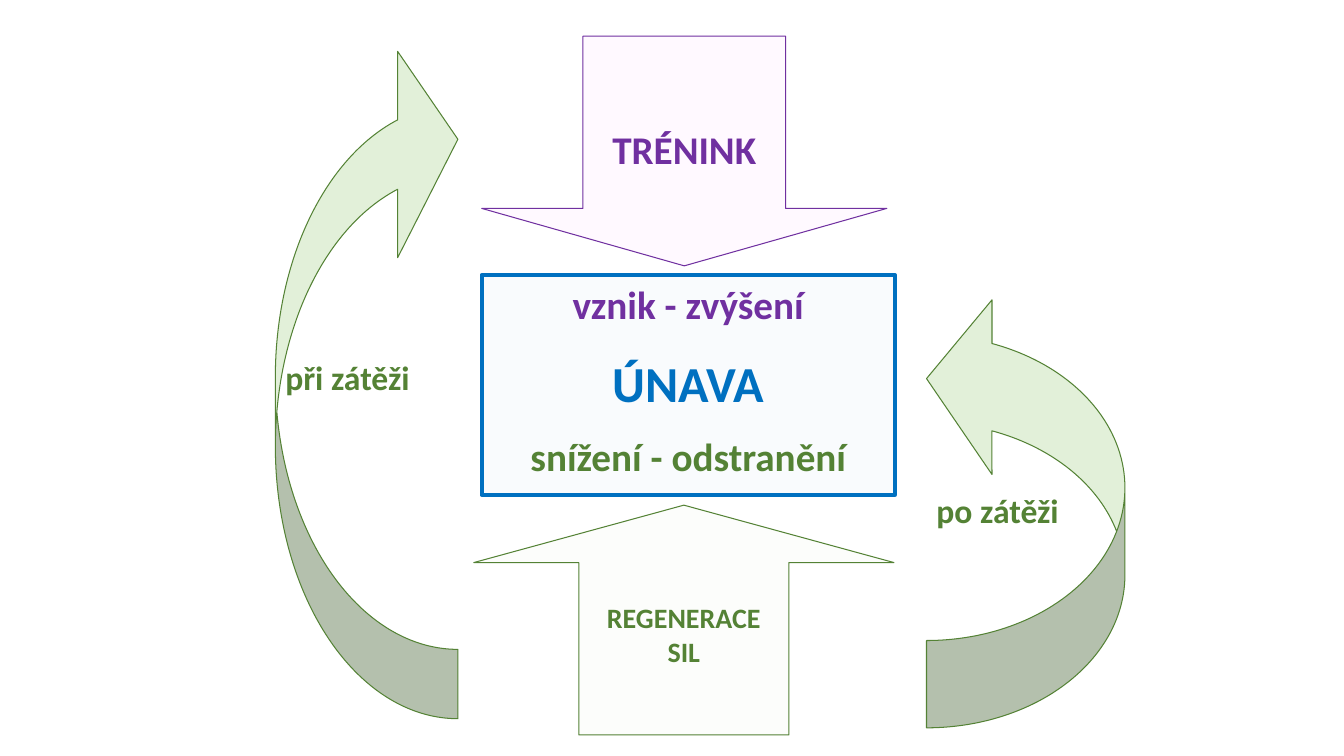
import pptx
import pptx.util
import pptx.dml.color
import pptx.enum.shapes
import pptx.enum.text
import pptx.oxml
import pptx.oxml.ns

Cm, Pt = pptx.util.Cm, pptx.util.Pt
SHAPE = pptx.enum.shapes.MSO_SHAPE
ANCHOR = pptx.enum.text.MSO_ANCHOR

PURPLE, BLUE, GREEN, PALE_GREEN = "7030A0", "0070C0", "548235", "E2F0D9"

# Content: lines are (text, size in points, colour)
FATIGUE = [("vznik - zvýšení", 28, PURPLE), ("ÚNAVA", 36, BLUE),
           ("snížení - odstranění", 28, GREEN)]
TRAINING = [("TRÉNINK", 28, PURPLE)]
RECOVERY = [("REGENERACE", 20, GREEN), ("SIL", 20, GREEN)]
AFTER_LOAD = [("po zátěži", 24, GREEN)]
DURING_LOAD = [("při zátěži", 24, GREEN)]

# Preset, (left, top, width, height) in cm, adjustments, fill, opacity %, line, width, lines
BOX = (SHAPE.RECTANGLE, (12.14, 6.93, 10.41, 5.54), (), "BDD7EE", 9, BLUE, 3, FATIGUE)
DOWN = (SHAPE.DOWN_ARROW, (12.14, 0.91, 10.21, 5.79), (0.5, 0.25),
        "FFCCFF", 11, PURPLE, 0.75, TRAINING)
UP = (SHAPE.UP_ARROW, (11.94, 12.73, 10.59, 5.79), (0.5, 0.25),
      PALE_GREEN, 9, GREEN, 0.75, RECOVERY)
RIGHT_LOOP = (SHAPE.CURVED_UP_ARROW, (20.35, 10.34, 11, 5), (0.44, 0.88, 0.33),
              PALE_GREEN, 100, GREEN, 0.75, AFTER_LOAD)
LEFT_LOOP = (SHAPE.CURVED_DOWN_ARROW, (0.64, 7.21, 17.2, 4.6), (0.38, 1.13, 0.33),
             PALE_GREEN, 100, GREEN, 0.75, DURING_LOAD)


def rgb(color):
    return pptx.dml.color.RGBColor.from_string(color)


def add_part(slide, preset, place, adjustments, fill, opacity, line, width, lines):
    sp = slide.shapes.add_shape(preset, *(Cm(v) for v in place))
    sp.shadow.inherit = False
    for i, value in enumerate(adjustments):
        sp.adjustments[i] = value
    sp.fill.solid()
    sp.fill.fore_color.rgb = rgb(fill)
    if opacity < 100:
        clr = sp.fill._xPr.find(".//" + pptx.oxml.ns.qn("a:srgbClr"))
        clr.append(pptx.oxml.parse_xml(
            f'<a:alpha {pptx.oxml.ns.nsdecls("a")} val="{opacity * 1000}"/>'))
    sp.line.color.rgb = rgb(line)
    sp.line.width = Pt(width)

    tf = sp.text_frame
    tf.word_wrap = False
    tf.vertical_anchor = ANCHOR.MIDDLE
    for i, (text, size, color) in enumerate(lines):
        p = tf.add_paragraph() if i else tf.paragraphs[0]
        p.alignment = pptx.enum.text.PP_ALIGN.CENTER
        r = p.add_run()
        r.text = text
        r.font.name = "Calibri"
        r.font.size = Pt(size)
        r.font.bold = True
        r.font.color.rgb = rgb(color)
    return sp


prs = pptx.Presentation()
prs.slide_width, prs.slide_height = Cm(33.87), Cm(19.05)
slide = prs.slides.add_slide(prs.slide_layouts[6])

# Central box: text from the top, half a line between the paragraphs
tf = add_part(slide, *BOX).text_frame
tf.word_wrap = True
tf.vertical_anchor = ANCHOR.TOP
for p, (_, size, _) in zip(tf.paragraphs, FATIGUE):
    p.space_before = Pt(size / 2)

# Straight arrows: training from above, recovery from below
add_part(slide, *DOWN).text_frame.margin_top = Cm(0.74)
add_part(slide, *UP)

# Curved arrows: turned upright, with the label kept horizontal
for loop in (RIGHT_LOOP, LEFT_LOOP):
    sp = add_part(slide, *loop)
    sp.rotation = 270
    sp.text_frame._txBody.bodyPr.set("vert", "eaVert")

prs.save("out.pptx")
